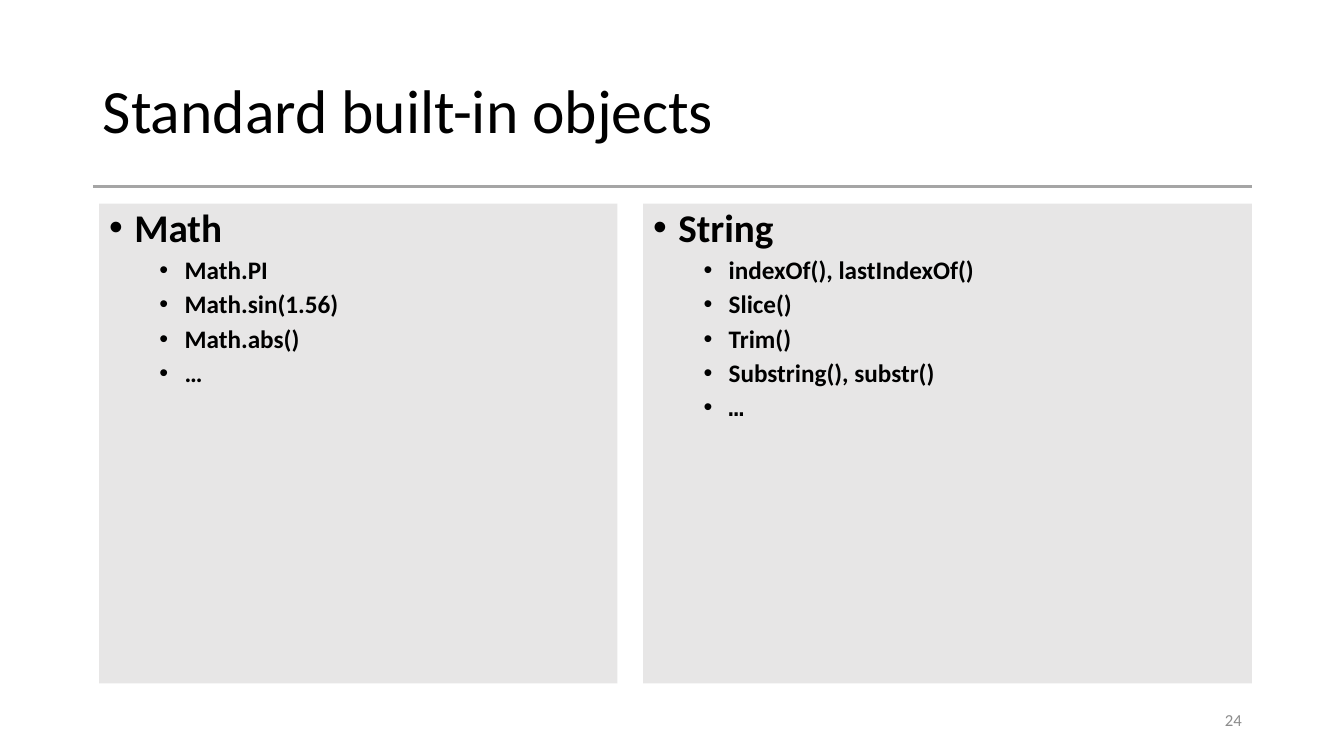
from lxml import etree
from pptx import Presentation
from pptx.dml.color import RGBColor
from pptx.enum.shapes import MSO_CONNECTOR as CONN, MSO_SHAPE as SHAPE
from pptx.enum.text import MSO_ANCHOR as ANCHOR, PP_ALIGN as ALIGN
from pptx.oxml.ns import qn
from pptx.util import Cm, Pt

COLORS = {"text": "000000", "number": "8C8C8C", "rule": "A5A5A5", "panel": "E7E6E6"}
LEFT, RIGHT = 2.34, 31.55
RULE_Y = 4.7
PANEL_Y, PANEL_H = 5.13, 12.09


class Deck:
    font = "Calibri"

    def __init__(self):
        self.prs = Presentation()
        self.prs.slide_width, self.prs.slide_height = Cm(33.87), Cm(19.05)
        self.s = self.prs.slides.add_slide(self.prs.slide_layouts[6])

    def color(self, name):
        return RGBColor.from_string(COLORS[name])

    def style(self, p, size, color="text", bold=False, font=None):
        for r in p.runs:
            r.font.name = font or self.font
            r.font.size = Pt(size)
            r.font.bold = bold
            r.font.color.rgb = self.color(color)

    def rule(self, x1, x2, y):
        sp = self.s.shapes.add_connector(CONN.STRAIGHT, Cm(x1), Cm(y), Cm(x2), Cm(y))
        sp.line.color.rgb = self.color("rule")
        sp.line.width = Pt(1.5)
        etree.SubElement(sp._element.spPr, qn("a:effectLst"))

    def text(self, text, x, y, w, h, size, color="text", align=ALIGN.LEFT):
        tf = self.s.shapes.add_textbox(Cm(x), Cm(y), Cm(w), Cm(h)).text_frame
        tf.word_wrap = True
        tf.vertical_anchor = ANCHOR.MIDDLE
        p = tf.paragraphs[0]
        p.text = text
        p.alignment = align
        p.line_spacing = 0.9
        self.style(p, size, color)

    def bullet(self, p, indent):
        pPr = p._p.get_or_add_pPr()
        pPr.set("marL", str(Cm(indent)))
        pPr.set("indent", str(-Cm(0.635)))
        etree.SubElement(pPr, qn("a:buFont")).set("typeface", "Arial")
        etree.SubElement(pPr, qn("a:buChar")).set("char", "•")

    def panel(self, heading, items, x, w, last_font=None):
        sp = self.s.shapes.add_shape(SHAPE.RECTANGLE, Cm(x), Cm(PANEL_Y), Cm(w), Cm(PANEL_H))
        sp.shadow.inherit = False
        sp.fill.solid()
        sp.fill.fore_color.rgb = self.color("panel")
        sp.line.fill.background()
        tf = sp.text_frame
        tf.word_wrap = True
        tf.vertical_anchor = ANCHOR.TOP
        tf.text = "\n".join([heading, *items])
        for i, p in enumerate(tf.paragraphs):
            p.alignment = ALIGN.LEFT
            p.level = 1 if i else 0
            p.line_spacing = 0.9
            p.space_before = Pt(5 if i else 10)
            self.bullet(p, 1.905 if i else 0.635)
            self.style(p, 18 if i else 28, bold=True, font=last_font if i == len(items) else None)


def main():
    deck = Deck()
    deck.rule(LEFT, RIGHT, RULE_Y)
    deck.text("Standard built-in objects", LEFT, 1.02, RIGHT - LEFT, 3.68, 44)
    deck.text("24", 23.93, 17.65, 7.62, 1.02, 12, "number", ALIGN.RIGHT)
    deck.panel("Math", ["Math.PI", "Math.sin(1.56)", "Math.abs()", "…"], 2.5, 13.06)
    deck.panel(
        "String",
        ["indexOf(), lastIndexOf()", "Slice()", "Trim()", "Substring(), substr()", "…"],
        16.21, 15.34, "Courier New",
    )
    deck.prs.save("out.pptx")


if __name__ == "__main__":
    main()
